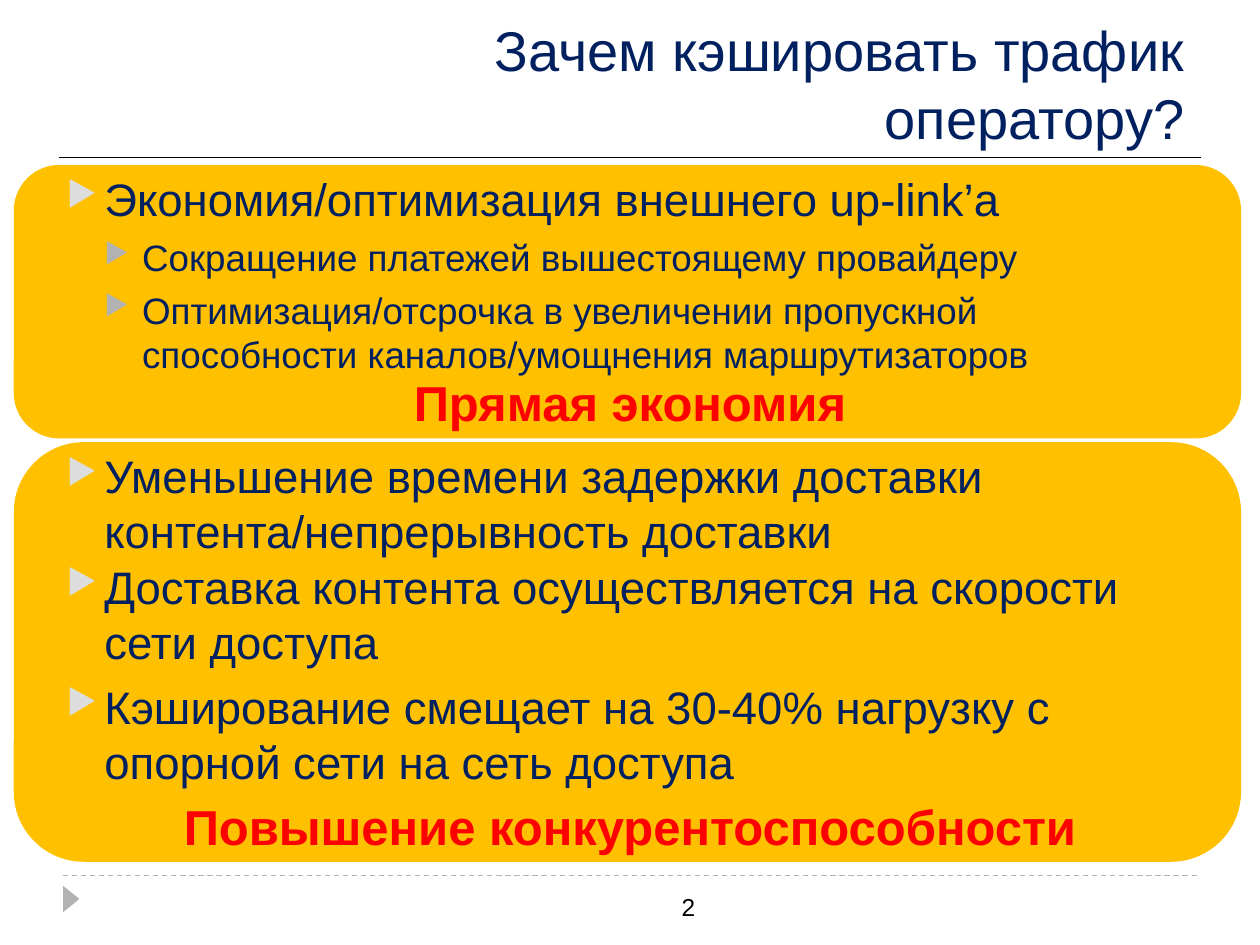
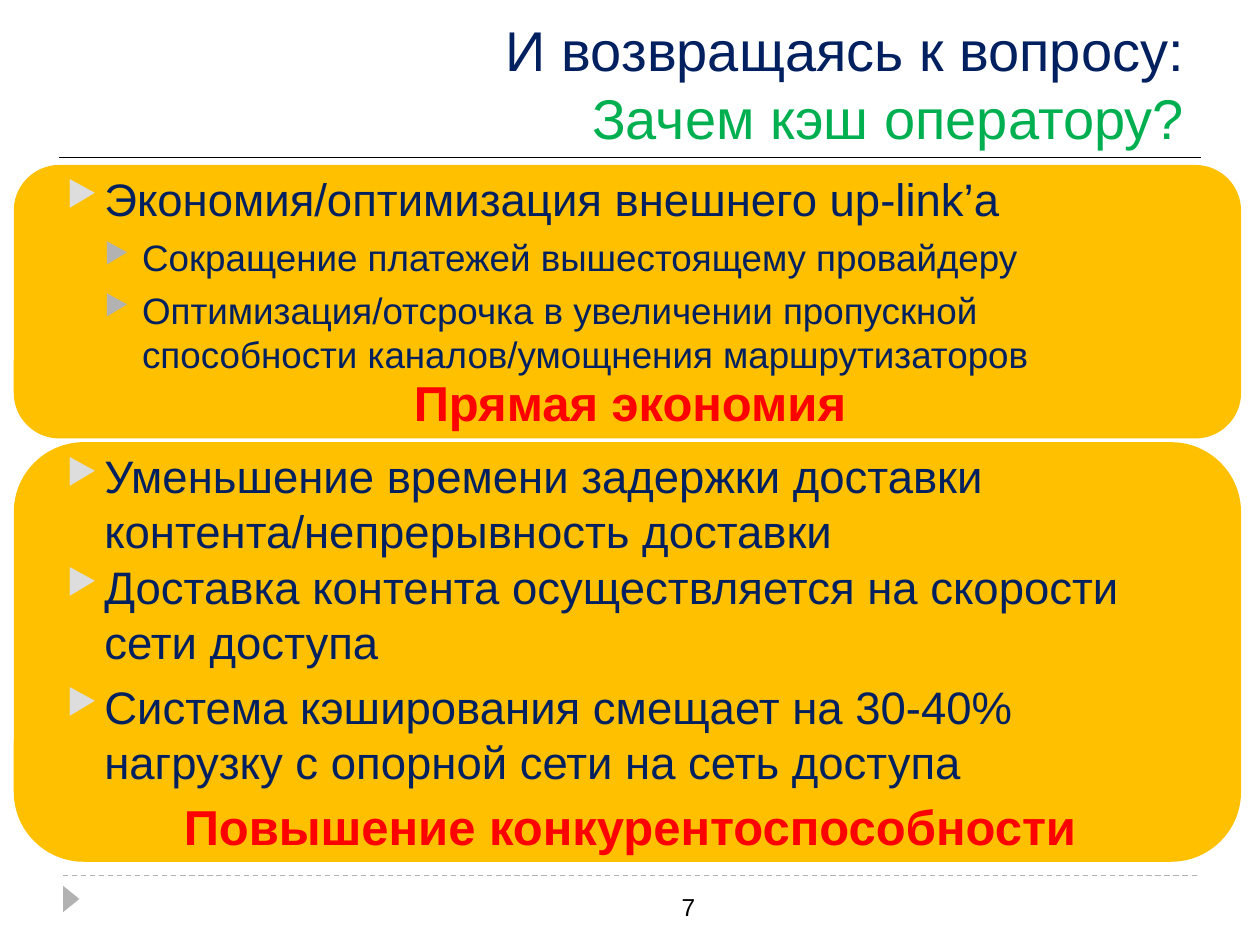
from lxml.etree import SubElement as Sub
from pptx import Presentation
from pptx.dml.color import RGBColor as RGB
from pptx.enum.dml import MSO_LINE as Dash
from pptx.enum.shapes import MSO_CONNECTOR as Conn, MSO_SHAPE as Kind
from pptx.enum.text import MSO_ANCHOR as Anchor, PP_ALIGN as Align
from pptx.oxml.ns import qn
from pptx.util import Inches, Pt

COLORS = {"navy": "002060", "gold": "FFC000", "red": "FF0000", "green": "00B050",
          "black": "000000", "gray": "B2B2B2", "pale": "DDDDDD"}
FONT = "Arial"
COLS, ROWS = 100, 75

# Bullet levels: text size, space before, bullet colour
LEVELS = [(26, 6, "pale"), (21, 5, "gray")]
INDENT = Inches(0.3)


class Deck:
    def __init__(self):
        self.prs = Presentation()
        self.prs.slide_width, self.prs.slide_height = Inches(10), Inches(7.5)
        self.slide = None

    def x(self, col):
        return round(self.prs.slide_width * col / COLS)

    def y(self, row):
        return round(self.prs.slide_height * row / ROWS)

    def area(self, col, row, wide, high):
        return self.x(col), self.y(row), self.x(wide), self.y(high)

    def color(self, name):
        return RGB.from_string(COLORS[name])

    def style(self, para, size, color, bold=False):
        font = para.font
        font.name, font.size, font.bold = FONT, Pt(size), bold
        font.color.rgb = self.color(color)

    def line(self, left, right, row, color, dash=None):
        rule = self.slide.shapes.add_connector(
            Conn.STRAIGHT, self.x(left), self.y(row), self.x(right), self.y(row))
        rule.line.color.rgb = self.color(color)
        rule.line.width = Pt(0.75)
        if dash:
            rule.line.dash_style = dash
        Sub(rule._element.spPr, qn("a:effectLst"))

    def shape(self, kind, area, color, turn=0):
        form = self.slide.shapes.add_shape(kind, *self.area(*area))
        form.shadow.inherit = False
        form.fill.solid()
        form.fill.fore_color.rgb = self.color(color)
        form.line.fill.background()
        form.rotation = turn

    def frame(self, area, anchor=Anchor.TOP):
        box = self.slide.shapes.add_textbox(*self.area(*area)).text_frame
        box.word_wrap = True
        box.vertical_anchor = anchor
        return box

    def label(self, area, text, size, color, bold=False):
        para = self.frame(area).paragraphs[0]
        para.text, para.alignment = text, Align.CENTER
        self.style(para, size, color, bold)

    def title(self, parts):
        para = self.frame((21.1, 2.3, 73.9, 8.6), Anchor.MIDDLE).paragraphs[0]
        para.alignment = Align.RIGHT
        for i, (text, color) in enumerate(parts):
            if i:
                para.add_line_break()
            run = para.add_run()
            run.text = text
            run.font.color.rgb = self.color(color)
        self.style(para, 32, "navy")

    def bullets(self, row, high, items):
        box = self.frame((4.3, row, 90.6, high))
        for i, (level, text) in enumerate(items):
            para = box.add_paragraph() if i else box.paragraphs[0]
            para.text, para.level = text, level
            size, gap, tint = LEVELS[level]
            props = para._p.get_or_add_pPr()
            props.set("marL", str(INDENT * (level + 1)))
            props.set("indent", str(-INDENT))
            Sub(Sub(props, qn("a:buClr")), qn("a:srgbClr"), val=COLORS[tint])
            Sub(props, qn("a:buSzPct"), val="76000")
            Sub(props, qn("a:buChar"), char="▶")
            if i:
                para.space_before = Pt(gap)
            self.style(para, size, "navy")

    def panel(self, row, high, slogan):
        self.shape(Kind.ROUNDED_RECTANGLE, (1.1, row, 97.4, high), "gold")
        self.label((0, row + high - 5.7, COLS, 5.7), slogan, 28, "red", True)

    def page(self, number, title):
        self.slide = self.prs.slides.add_slide(self.prs.slide_layouts[6])
        # Rules and footer
        self.line(4.7, 95.3, 12.5, "black")
        self.line(5, 95, 69.5, "gray", Dash.DASH)
        self.shape(Kind.ISOSCELES_TRIANGLE, (4.6, 70.7, 2.1, 1.3), "gray", 90)
        self.label((43.8, 70.3, 21.7, 4), str(number), 14, "black")
        self.title(title)


SAVING = [
    (0, "Экономия/оптимизация внешнего up-link’а"),
    (1, "Сокращение платежей вышестоящему провайдеру"),
    (1, "Оптимизация/отсрочка в увеличении пропускной способности "
        "каналов/умощнения маршрутизаторов"),
]
SPEED = [
    (35.1, "Уменьшение времени задержки доставки контента/непрерывность доставки"),
    (43.9, "Доставка контента осуществляется на скорости сети доступа"),
]
LOAD = " смещает на 30-40% нагрузку с опорной сети на сеть доступа"

# Page number, title lines, subject of the last point
PAGES = [
    (2, [("Зачем кэшировать трафик оператору?", "navy")], "Кэширование"),
    (7, [("И возвращаясь к вопросу:", "navy"), ("Зачем кэш оператору?", "green")],
     "Система кэширования"),
]


def main():
    deck = Deck()
    for number, title, topic in PAGES:
        deck.page(number, title)
        # Direct savings
        deck.panel(13.1, 21.7, "Прямая экономия")
        deck.bullets(13.1, 17.3, SAVING)
        # Competitive edge
        deck.panel(35.1, 33.3, "Повышение конкурентоспособности")
        for row, text in SPEED + [(53.4, topic + LOAD)]:
            deck.bullets(row, 6.2, [(0, text)])
    deck.prs.save("out.pptx")


if __name__ == "__main__":
    main()
